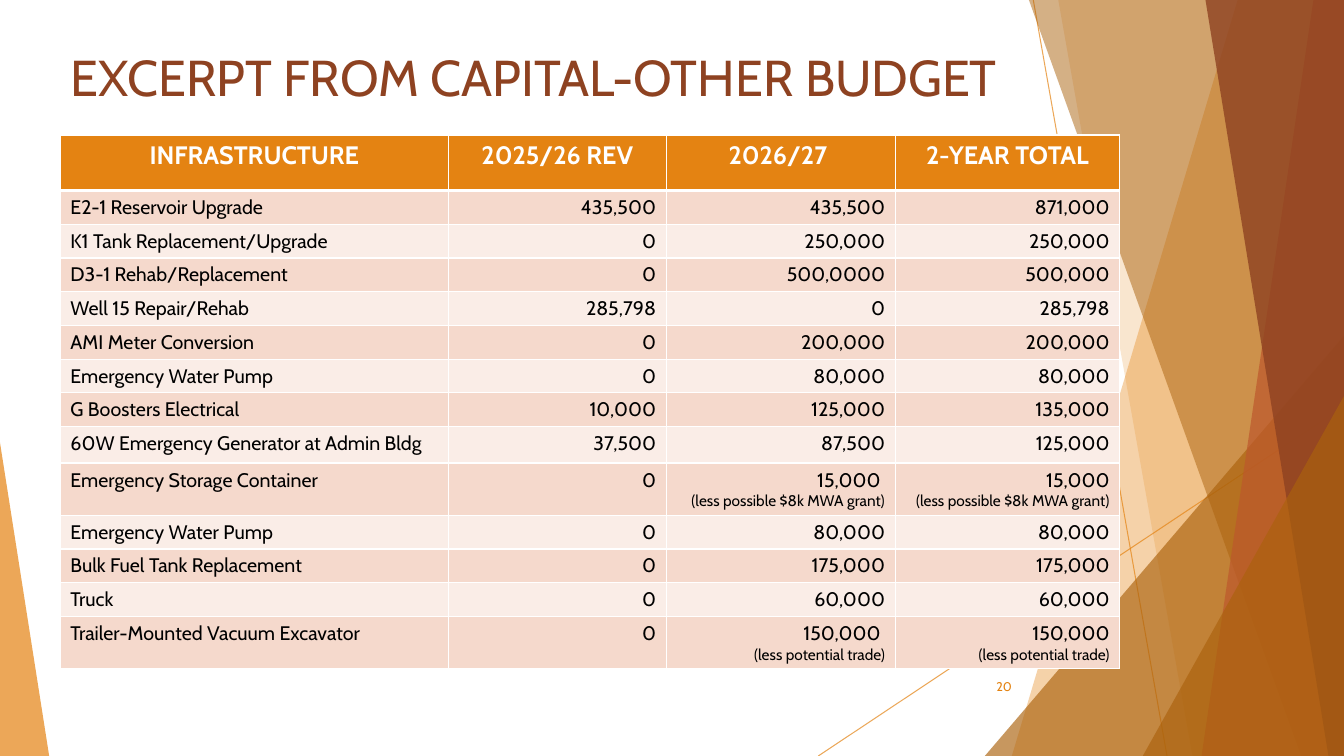
from dataclasses import dataclass

from lxml import etree
from pptx import Presentation
from pptx.dml.color import RGBColor
from pptx.enum.shapes import MSO_CONNECTOR, MSO_SHAPE
from pptx.enum.text import MSO_ANCHOR, MSO_AUTO_SIZE, PP_ALIGN
from pptx.oxml.ns import qn
from pptx.util import Cm, Pt

LEFT, CENTER, RIGHT = PP_ALIGN.LEFT, PP_ALIGN.CENTER, PP_ALIGN.RIGHT
TOP, MIDDLE = MSO_ANCHOR.TOP, MSO_ANCHOR.MIDDLE
NO_AUTOFIT = MSO_AUTO_SIZE.NONE
STRAIGHT = MSO_CONNECTOR.STRAIGHT
TRIANGLE = MSO_SHAPE.ISOSCELES_TRIANGLE

FONT = "Cabin"
ORANGE = RGBColor(0xE4, 0x83, 0x12)
BROWN = RGBColor(0xAB, 0x62, 0x0D)
RUST = RGBColor(0xBD, 0x58, 0x2C)
MAROON = RGBColor(0x8E, 0x42, 0x21)
DARK_BAND = RGBColor(0xF5, 0xD9, 0xCC)
LIGHT_BAND = RGBColor(0xFA, 0xED, 0xE7)
WHITE = RGBColor(0xFF, 0xFF, 0xFF)
BLACK = RGBColor(0, 0, 0)

SLIDE_WIDTH, SLIDE_HEIGHT = 33.87, 19.05  # centimetres, as all sizes below


@dataclass
class Ray:
    """A thin line across the right-hand side."""
    start: tuple[float, float]
    end: tuple[float, float]


@dataclass
class Band:
    """A full-height area from a slanted left edge to the right slide edge."""
    top_x: float
    bottom_x: float
    color: RGBColor
    opacity: int


@dataclass
class Corner:
    """A right triangle standing on the bottom slide edge."""
    left: float
    width: float
    height: float
    apex: float
    color: RGBColor
    opacity: int


@dataclass
class BudgetRow:
    item: str
    amounts: tuple[str, str, str]
    height: float = 0.85
    note: str = ""


DECORATIONS = [
    Ray((26.04, 0), (29.41, SLIDE_HEIGHT)),
    Ray((SLIDE_WIDTH, 10.24), (20.62, SLIDE_HEIGHT)),
    Band(31.19, 25.5, ORANGE, 36),
    Band(26.67, 30.05, ORANGE, 20),
    Corner(24.82, 9.05, 10.59, 1, BROWN, 66),
    Band(25.93, 32.79, BROWN, 50),
    Band(33.1, 30.28, RUST, 70),
    Band(30.38, 33.48, MAROON, 80),
    Corner(28.8, 5.07, 9.07, 1, BROWN, 66),
    Corner(0, 1.24, 7.9, 0, ORANGE, 70),
]

COLUMN_WIDTHS = (9.78, 5.49, 5.77, 5.66)
HEADINGS = ("INFRASTRUCTURE", "2025/26 REV", "2026/27 ", "2-YEAR TOTAL")
HEADER_HEIGHT = 1.4
NOTED_HEIGHT = 1.31
BUDGET = [
    BudgetRow("E2-1 Reservoir Upgrade", ("435,500", "435,500", "871,000")),
    BudgetRow("K1 Tank Replacement/Upgrade", ("0", "250,000", "250,000")),
    BudgetRow("D3-1 Rehab/Replacement", ("0", "500,0000", "500,000")),
    BudgetRow("Well 15 Repair/Rehab", ("285,798", "0", "285,798")),
    BudgetRow("AMI Meter Conversion", ("0", "200,000", "200,000")),
    BudgetRow("Emergency Water Pump", ("0", "80,000", "80,000")),
    BudgetRow("G Boosters Electrical", ("10,000", "125,000", "135,000")),
    BudgetRow("60W Emergency Generator at Admin Bldg", ("37,500", "87,500", "125,000"), 0.92),
    BudgetRow("Emergency Storage Container", ("0", "15,000 ", "15,000"),
              NOTED_HEIGHT, "(less possible $8k MWA grant)"),
    BudgetRow("Emergency Water Pump", ("0", "80,000", "80,000")),
    BudgetRow("Bulk Fuel Tank Replacement", ("0", "175,000", "175,000")),
    BudgetRow("Truck", ("0", "60,000", "60,000")),
    BudgetRow("Trailer-Mounted Vacuum Excavator", ("0", "150,000 ", "150,000"),
              NOTED_HEIGHT, "(less potential trade)"),
]


def write(paragraph, text: str, *, size: float, color: RGBColor,
          align=LEFT, bold: bool = False) -> None:
    paragraph.alignment = align
    run = paragraph.add_run()
    run.text = text
    run.font.name, run.font.size, run.font.bold = FONT, Pt(size), bold
    run.font.color.rgb = color


def set_opacity(shape, percent: int) -> None:
    for color in shape._element.spPr.iter(qn("a:srgbClr")):
        etree.SubElement(color, qn("a:alpha"), val=str(percent * 1000))


def draw_decoration(shapes, part: Ray | Band | Corner) -> None:
    if isinstance(part, Ray):
        ray = shapes.add_connector(STRAIGHT, *map(Cm, part.start + part.end))
        ray.line.color.rgb, ray.line.width = ORANGE, Pt(0.75)
        etree.SubElement(ray._element.spPr, qn("a:effectLst"))
        set_opacity(ray, 70)
        return
    if isinstance(part, Band):
        builder = shapes.build_freeform(Cm(part.top_x), 0)
        outline = [(SLIDE_WIDTH, 0), (SLIDE_WIDTH, SLIDE_HEIGHT), (part.bottom_x, SLIDE_HEIGHT)]
        builder.add_line_segments([(Cm(x), Cm(y)) for x, y in outline], close=True)
        shape = builder.convert_to_shape()
    else:
        shape = shapes.add_shape(TRIANGLE, Cm(part.left), Cm(SLIDE_HEIGHT - part.height),
                                 Cm(part.width), Cm(part.height))
        shape.adjustments[0] = part.apex
    shape.shadow.inherit = False
    shape.fill.solid()
    shape.fill.fore_color.rgb = part.color
    shape.line.fill.background()
    set_opacity(shape, part.opacity)


def format_cell(cell, fill: RGBColor, top: float = 1, bottom: float = 1) -> None:
    properties = cell._tc.get_or_add_tcPr()
    for side, width in (("L", 1), ("R", 1), ("T", top), ("B", bottom)):
        border = etree.SubElement(properties, qn(f"a:ln{side}"), w=str(Pt(width)))
        solid = etree.SubElement(border, qn("a:solidFill"))
        etree.SubElement(solid, qn("a:srgbClr"), val=str(WHITE))
    cell.fill.solid()
    cell.fill.fore_color.rgb = fill


def draw_budget_table(shapes) -> None:
    heights = [HEADER_HEIGHT] + [row.height for row in BUDGET]
    table = shapes.add_table(len(heights), len(COLUMN_WIDTHS), Cm(1.52), Cm(3.4),
                             Cm(sum(COLUMN_WIDTHS)), Cm(sum(heights))).table
    for column, width in zip(table.columns, COLUMN_WIDTHS):
        column.width = Cm(width)
    for row, height in zip(table.rows, heights):
        row.height = Cm(height)

    for column, heading in enumerate(HEADINGS):
        cell = table.cell(0, column)
        format_cell(cell, ORANGE, bottom=3)
        write(cell.text_frame.paragraphs[0], heading, size=18, color=WHITE,
              align=CENTER, bold=True)

    for index, row in enumerate(BUDGET, start=1):
        for column, text in enumerate((row.item, *row.amounts)):
            cell = table.cell(index, column)
            format_cell(cell, DARK_BAND if index % 2 else LIGHT_BAND,
                        top=3 if index == 1 else 1)
            write(cell.text_frame.paragraphs[0], text, size=14, color=BLACK,
                  align=RIGHT if column else LEFT)
            if row.note and column >= 2:
                write(cell.text_frame.add_paragraph(), row.note, size=11,
                      color=BLACK, align=RIGHT)


def main() -> None:
    presentation = Presentation()
    presentation.slide_width, presentation.slide_height = Cm(SLIDE_WIDTH), Cm(SLIDE_HEIGHT)
    slide = presentation.slides.add_slide(presentation.slide_layouts[5])

    # Background facets
    for part in DECORATIONS:
        draw_decoration(slide.shapes, part)

    # Title
    title = slide.shapes.title
    title.left, title.top, title.width, title.height = Cm(1.52), Cm(1.04), Cm(23.88), Cm(4.72)
    title.text_frame.auto_size = NO_AUTOFIT
    title.text_frame.vertical_anchor = TOP
    write(title.text_frame.paragraphs[0], "EXCERPT FROM CAPITAL-OTHER BUDGET",
          size=36, color=MAROON)

    # Slide number
    number = slide.shapes.add_textbox(Cm(23.85), Cm(16.79), Cm(1.9), Cm(1.02)).text_frame
    number.word_wrap = True
    number.vertical_anchor = MIDDLE
    write(number.paragraphs[0], "20", size=9, color=ORANGE, align=RIGHT)

    # Budget table
    draw_budget_table(slide.shapes)

    presentation.save("out.pptx")


if __name__ == "__main__":
    main()
